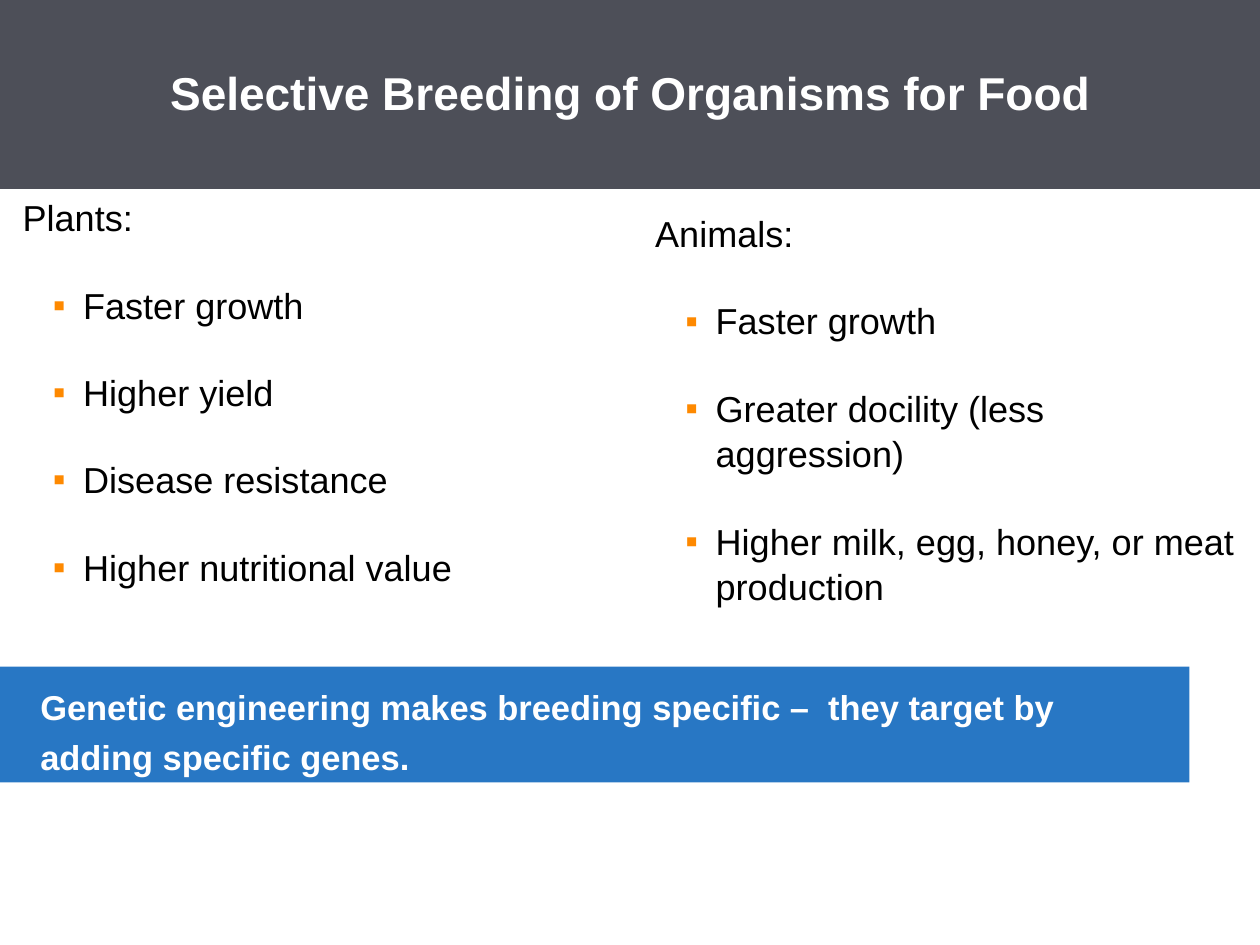
import pptx
import pptx.util
import pptx.dml.color
import pptx.enum.shapes
import pptx.enum.text
from lxml import etree

Inches, Pt = pptx.util.Inches, pptx.util.Pt
ALIGN = pptx.enum.text.PP_ALIGN
ANCHOR = pptx.enum.text.MSO_ANCHOR


def paint(target, code):
    """Set a solid colour on a fill or a font."""
    if hasattr(target, "solid"):
        target.solid()
        target.fore_color.rgb = pptx.dml.color.RGBColor.from_string(code)
    else:
        target.color.rgb = pptx.dml.color.RGBColor.from_string(code)


def write(para, text, size, code, bold=False, **form):
    """Fill a paragraph with one run and format both."""
    run = para.add_run()
    run.text = text
    for name, value in {"name": "Arial", "size": Pt(size), "bold": bold}.items():
        setattr(run.font, name, value)
    paint(run.font, code)
    para.alignment = ALIGN.LEFT
    for name, value in form.items():
        setattr(para, name, value)


deck = pptx.Presentation()
deck.slide_width, deck.slide_height = Inches(10), Inches(7.5)
slide = deck.slides.add_slide(deck.slide_layouts[5])

# Title band
title = slide.shapes.title
place = {"left": 0, "top": 0, "width": 10, "height": 1.5}
for name, value in place.items():
    setattr(title, name, Inches(value))
paint(title.fill, "4D4F58")
frame = title.text_frame
inset = {"margin_left": 0.17, "margin_right": 0.17,
         "margin_top": 0.07, "margin_bottom": 0.07}
for name, value in inset.items():
    setattr(frame, name, Inches(value))
frame.vertical_anchor = ANCHOR.MIDDLE
frame.auto_size = pptx.enum.text.MSO_AUTO_SIZE.NONE
head = frame.paragraphs[0]
write(head, "Selective Breeding of Organisms for Food", 26.3, "FFFFFF", True,
      line_spacing=0.95)
props = head._p.get_or_add_pPr()
props.set("marL", str(Inches(1.18)))
props.set("indent", "0")

# Two columns: left, width, right inset, heading, heading spacing, bullets
columns = [
    (0, 4.65, 0, "Plants:", Pt(20.6),
     ["Faster growth", "Higher yield", "Disease resistance",
      "Higher nutritional value"]),
    (5.02, 4.98, 0.18, "Animals:", 1.2,
     ["Faster growth", "Greater docility (less aggression)",
      "Higher milk, egg, honey, or meat production"]),
]
for left, width, right, label, pitch, items in columns:
    box = slide.shapes.add_textbox(Inches(left), Inches(1.51),
                                   Inches(width), Inches(5.99))
    frame = box.text_frame
    frame.word_wrap = True
    inset = {"margin_left": 0.18, "margin_right": right,
             "margin_top": 0.1, "margin_bottom": 0.1}
    for name, value in inset.items():
        setattr(frame, name, Inches(value))
    write(frame.paragraphs[0], label, 20.6, "000000", line_spacing=pitch)
    for item in items:
        para = frame.add_paragraph()
        write(para, item, 20.6, "000000", level=1,
              space_before=Pt(24), line_spacing=1.05)
        # Orange square bullet with a hanging indent
        props = para._p.get_or_add_pPr()
        props.set("marL", str(Inches(0.48)))
        props.set("indent", str(Inches(-0.24)))
        space = pptx.oxml.ns.qn
        tint = etree.SubElement(props, space("a:buClr"))
        etree.SubElement(tint, space("a:srgbClr")).set("val", "FE8900")
        etree.SubElement(props, space("a:buFont")).set("typeface", "Arial")
        etree.SubElement(props, space("a:buChar")).set("char", "▪")

# Closing banner
banner = slide.shapes.add_shape(pptx.enum.shapes.MSO_SHAPE.RECTANGLE, Inches(0),
                                Inches(5.29), Inches(9.44), Inches(0.92))
banner.shadow.inherit = False
paint(banner.fill, "2877C4")
banner.line.fill.background()
frame = banner.text_frame
frame.word_wrap = True
frame.vertical_anchor = ANCHOR.TOP
inset = {"margin_left": 0.32, "margin_right": 0.32,
         "margin_top": 0.09, "margin_bottom": 0.09}
for name, value in inset.items():
    setattr(frame, name, Inches(value))
write(frame.paragraphs[0],
      "Genetic engineering makes breeding specific –  they target by "
      "adding specific genes.", 19.7, "FFFFFF", True, line_spacing=1.2)

deck.save("out.pptx")
